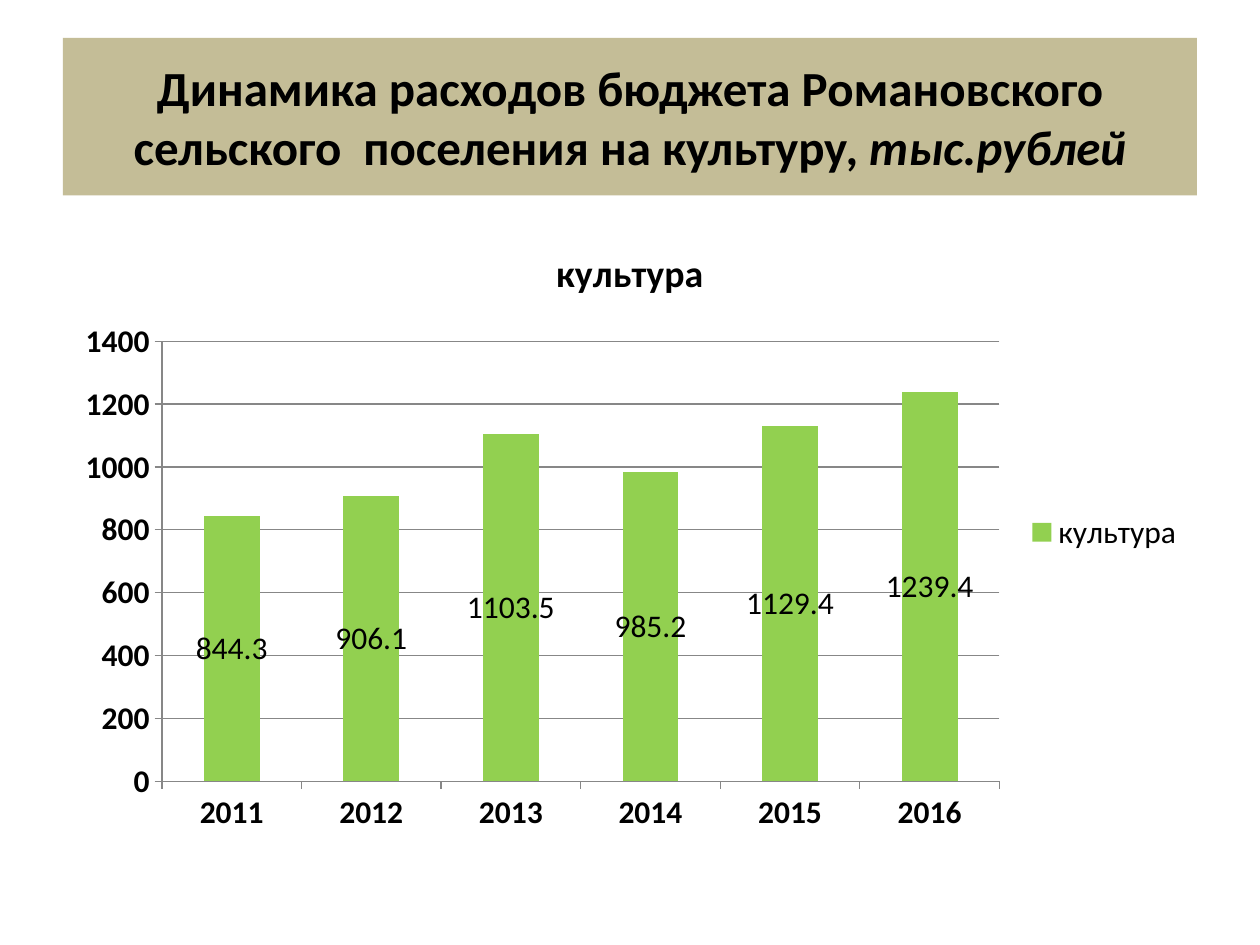
from pptx import Presentation
from pptx.chart.data import CategoryChartData
from pptx.dml.color import RGBColor
from pptx.enum.chart import XL_CHART_TYPE, XL_LEGEND_POSITION, XL_TICK_MARK
from pptx.enum.shapes import MSO_SHAPE
from pptx.enum.text import MSO_ANCHOR, PP_ALIGN
from pptx.util import Inches, Pt

BLACK = RGBColor(0x00, 0x00, 0x00)
SAND = RGBColor(0xC4, 0xBD, 0x97)
GREEN = RGBColor(0x92, 0xD0, 0x50)
GRAY = RGBColor(0x87, 0x87, 0x87)


def format_font(font, **values):
    for key, value in {"name": "Calibri", **values}.items():
        setattr(font, key, value)
    font.color.rgb = BLACK


presentation = Presentation()
presentation.slide_width = Inches(10)
presentation.slide_height = Inches(7.5)
slide = presentation.slides.add_slide(presentation.slide_layouts[6])

heading = slide.shapes.add_shape(
    MSO_SHAPE.RECTANGLE, Inches(0.5), Inches(0.3), Inches(9), Inches(1.25))
heading.shadow.inherit = False
heading.fill.solid()
heading.fill.fore_color.rgb = SAND
heading.line.fill.background()
heading.text_frame.word_wrap = True
heading.text_frame.vertical_anchor = MSO_ANCHOR.MIDDLE
heading_line = heading.text_frame.paragraphs[0]
heading_line.alignment = PP_ALIGN.CENTER
for wording, italic in [
    ("Динамика расходов бюджета Романовского сельского  поселения на культуру, ", False),
    ("тыс.рублей", True),
]:
    run = heading_line.add_run()
    run.text = wording
    format_font(run.font, size=Pt(28), bold=True, italic=italic)

spending = CategoryChartData()
spending.categories = ["2011", "2012", "2013", "2014", "2015", "2016"]
spending.add_series("культура", [844.3, 906.1, 1103.5, 985.2, 1129.4, 1239.4])
chart = slide.shapes.add_chart(
    XL_CHART_TYPE.COLUMN_STACKED,
    Inches(0.5), Inches(1.75), Inches(9), Inches(4.95), spending).chart
format_font(chart.font, size=Pt(18))

chart.has_title = True
chart.chart_title.include_in_layout = False
chart_heading = chart.chart_title.text_frame.paragraphs[0].add_run()
chart_heading.text = "культура"
format_font(chart_heading.font, size=Pt(21.6), bold=True)

chart.has_legend = True
chart.legend.position = XL_LEGEND_POSITION.RIGHT
chart.legend.include_in_layout = False
format_font(chart.legend.font, size=Pt(18))

for axis in (chart.category_axis, chart.value_axis):
    axis.major_tick_mark = XL_TICK_MARK.OUTSIDE
    axis.minor_tick_mark = XL_TICK_MARK.NONE
    axis.format.line.color.rgb = GRAY
    axis.format.line.width = Pt(0.75)
    format_font(axis.tick_labels.font, size=Pt(18), bold=True)

value_scale = {"minimum_scale": 0, "maximum_scale": 1400, "major_unit": 200,
               "has_major_gridlines": True}
for key, value in value_scale.items():
    setattr(chart.value_axis, key, value)
gridline = chart.value_axis.major_gridlines.format.line
gridline.color.rgb = GRAY
gridline.width = Pt(0.75)

columns = chart.plots[0]
column_format = {"gap_width": 150, "overlap": 100, "vary_by_categories": False,
                 "has_data_labels": True}
for key, value in column_format.items():
    setattr(columns, key, value)
columns.data_labels.show_value = True
format_font(columns.data_labels.font, size=Pt(18))
columns.series[0].format.fill.solid()
columns.series[0].format.fill.fore_color.rgb = GREEN

presentation.save("out.pptx")
